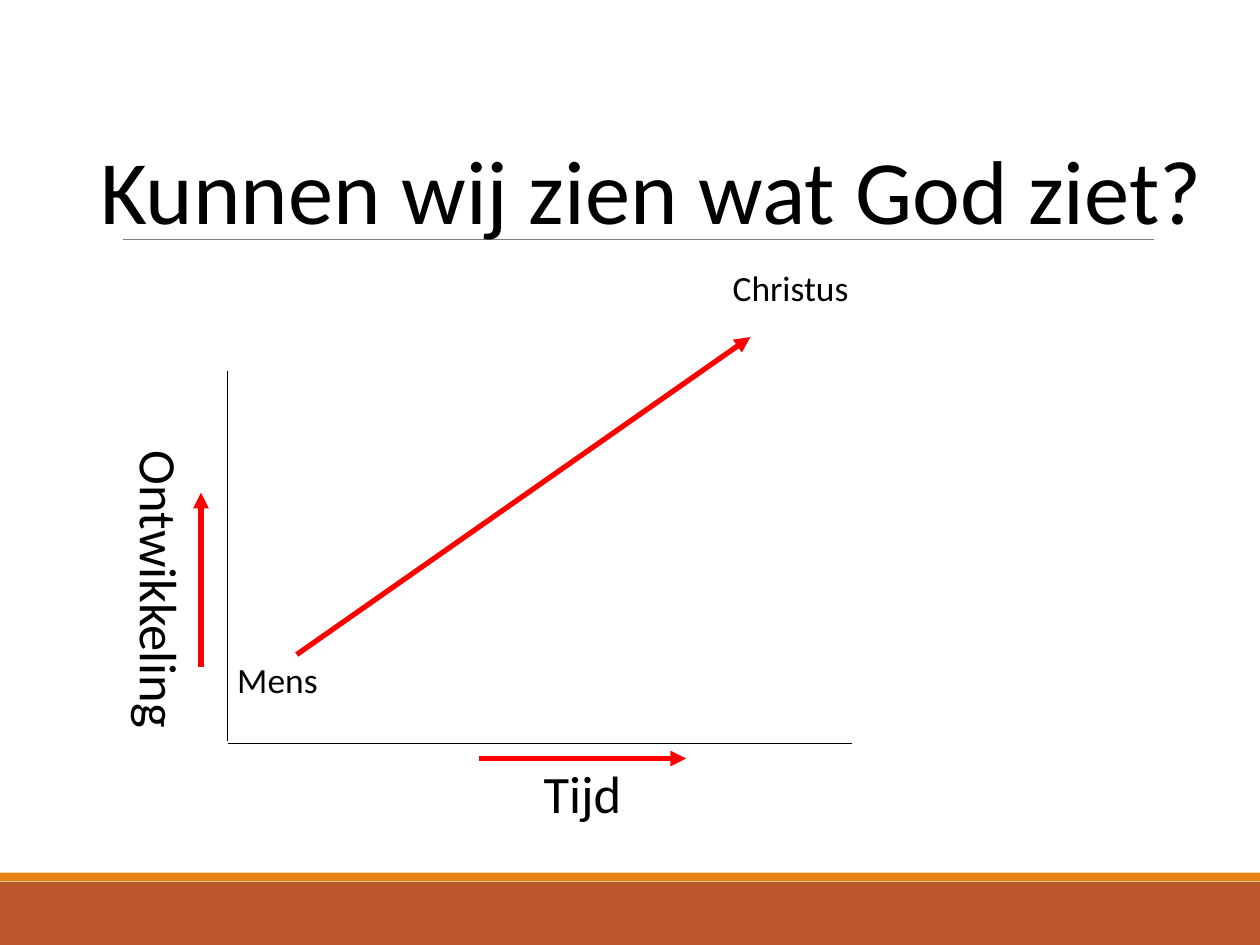
from dataclasses import dataclass

from lxml import etree
from pptx import Presentation
from pptx import util as u
from pptx.dml.color import RGBColor
from pptx.enum import shapes, text
from pptx.oxml.ns import qn
from pptx.slide import Slide

BLACK = RGBColor(0x00, 0x00, 0x00)
RED = RGBColor(0xFF, 0x00, 0x00)
GREY = RGBColor(0x80, 0x80, 0x80)
RUST = RGBColor(0xBD, 0x58, 0x2C)
ORANGE = RGBColor(0xE4, 0x83, 0x12)

INSET = u.Pt(2.88)
FRAME_FORMAT = {
    "word_wrap": False,
    "auto_size": text.MSO_AUTO_SIZE.SHAPE_TO_FIT_TEXT,
    "vertical_anchor": text.MSO_ANCHOR.MIDDLE,
    "margin_left": INSET,
    "margin_top": INSET,
    "margin_right": INSET,
    "margin_bottom": INSET,
}


@dataclass
class Band:
    top: float
    height: float
    color: RGBColor


@dataclass
class Line:
    start: tuple[float, float]
    end: tuple[float, float]
    color: RGBColor
    width: float
    arrow: bool = False


@dataclass
class Label:
    wording: str
    box: tuple[float, float, float, float]
    size: float
    rotation: float = 0


def draw_band(slide: Slide, band: Band) -> None:
    bar = slide.shapes.add_shape(shapes.MSO_SHAPE.RECTANGLE, 0, u.Pt(band.top),
                                 u.Pt(1440), u.Pt(band.height))
    bar.shadow.inherit = False
    bar.fill.solid()
    bar.fill.fore_color.rgb = band.color
    bar.line.fill.background()


def draw_line(slide: Slide, line: Line) -> None:
    stroke = slide.shapes.add_connector(
        shapes.MSO_CONNECTOR.STRAIGHT, *map(u.Pt, line.start + line.end))
    stroke.line.color.rgb = line.color
    stroke.line.width = u.Pt(line.width)
    if line.arrow:
        etree.SubElement(stroke.line._get_or_add_ln(), qn("a:tailEnd"), type="triangle")
    etree.SubElement(stroke._element.spPr, qn("a:effectLst"))


def draw_label(slide: Slide, label: Label) -> None:
    box = slide.shapes.add_textbox(*map(u.Pt, label.box))
    box.rotation = label.rotation
    for name, value in FRAME_FORMAT.items():
        setattr(box.text_frame, name, value)
    paragraph = box.text_frame.paragraphs[0]
    paragraph.alignment = text.PP_ALIGN.CENTER
    run = paragraph.add_run()
    run.text = label.wording
    for name, value in {"name": "Calibri", "size": u.Pt(label.size)}.items():
        setattr(run.font, name, value)
    run.font.color.rgb = BLACK


# Footer bands, bottom one first
BANDS = [Band(1008, 72, RUST), Band(997.2, 10.08, ORANGE)]

# Title rule, the two axes, then the arrows
LINES = [
    Line((141.12, 273.6), (1318.32, 273.6), GREY, 0.5),
    Line((259.92, 424.08), (259.92, 847.44), BLACK, 2),
    Line((973.44, 849.6), (260.64, 849.6), BLACK, 2),
    Line((229.68, 761.76), (229.68, 563.04), RED, 6, arrow=True),
    Line((339.12, 748.08), (857.52, 385.2), RED, 6, arrow=True),
    Line((547.2, 866.88), (784.08, 866.88), RED, 6, arrow=True),
]

# Axis names, end points of the growth arrow, and the title
LABELS = [
    Label("Ontwikkeling", (20.88, 634.32, 326.16, 78.48), 60, rotation=90),
    Label("Mens", (267.84, 748.08, 98.64, 55.44), 40.5),
    Label("Christus", (833.76, 300.24, 139.68, 55.44), 40.5),
    Label("Tijd", (617.76, 866.16, 95.76, 78.48), 60),
    Label("Kunnen wij zien wat God ziet?", (105.12, 149.76, 1278, 131.76), 103.5),
]


def main() -> None:
    deck = Presentation()
    deck.slide_width, deck.slide_height = u.Pt(1440), u.Pt(1080)
    slide = deck.slides.add_slide(deck.slide_layouts[6])
    for band in BANDS:
        draw_band(slide, band)
    for line in LINES:
        draw_line(slide, line)
    for label in LABELS:
        draw_label(slide, label)
    deck.save("out.pptx")


if __name__ == "__main__":
    main()
